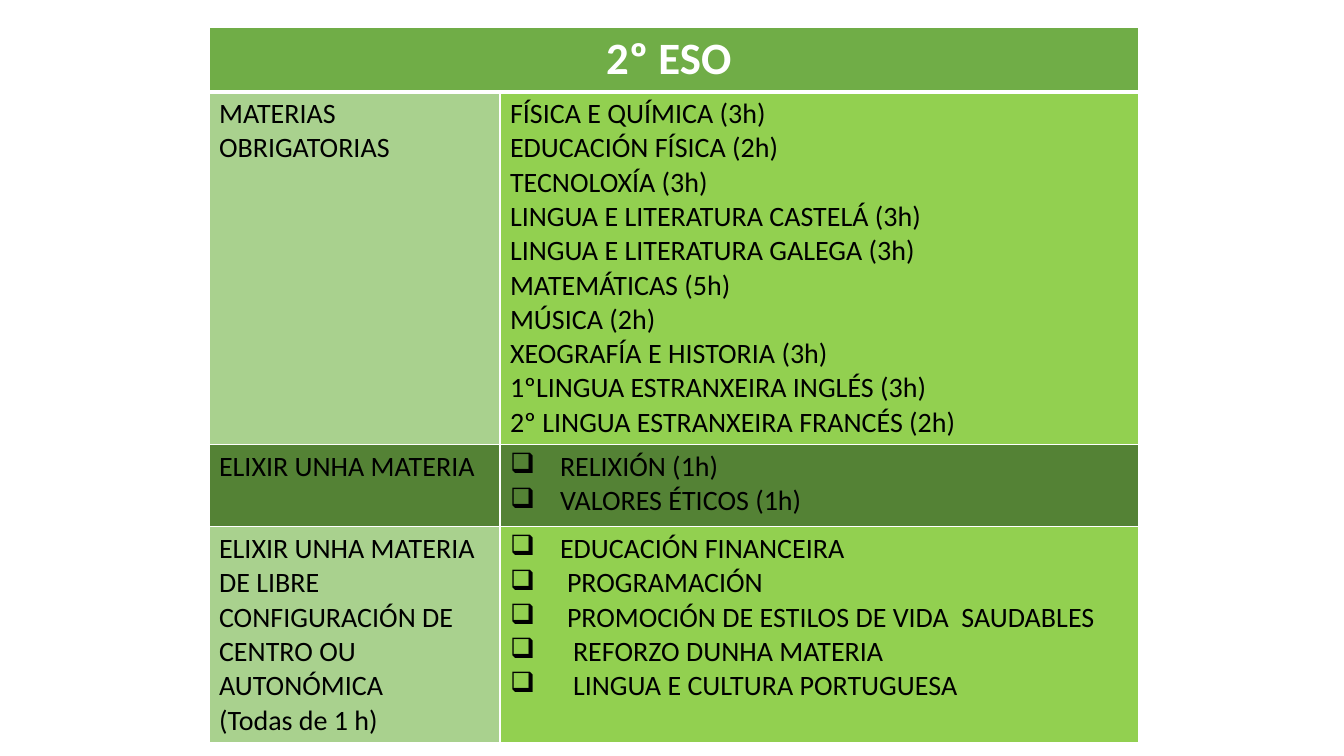
from lxml import etree
from pptx import Presentation
from pptx.dml.color import RGBColor
from pptx.enum.text import PP_ALIGN
from pptx.oxml.ns import qn
from pptx.util import Emu, Pt

PX = 914400 / 100.8
CENTER = PP_ALIGN.CENTER
LEFT = PP_ALIGN.LEFT

WHITE = RGBColor(0xFF, 0xFF, 0xFF)
BLACK = RGBColor(0x00, 0x00, 0x00)
HEADER_GREEN = RGBColor(0x70, 0xAD, 0x47)
PALE_GREEN = RGBColor(0xA9, 0xD1, 0x8E)
BRIGHT_GREEN = RGBColor(0x92, 0xD0, 0x50)
DARK_GREEN = RGBColor(0x54, 0x82, 0x35)

TABLE_BOX = (209, 27, 930, 714)
COLUMN_WIDTHS = (291, 639)
ROW_HEIGHTS = (64, 353, 82, 215)

# Each line is its text and, for a bulleted line, its indent in px.
SUBJECT_ROWS = [
    (
        PALE_GREEN, [("MATERIAS OBRIGATORIAS", 0)],
        BRIGHT_GREEN, [
            ("FÍSICA E QUÍMICA (3h)", 0),
            ("EDUCACIÓN FÍSICA (2h)", 0),
            ("TECNOLOXÍA (3h)", 0),
            ("LINGUA E LITERATURA CASTELÁ (3h)", 0),
            ("LINGUA E LITERATURA GALEGA (3h)", 0),
            ("MATEMÁTICAS (5h)", 0),
            ("MÚSICA (2h)", 0),
            ("XEOGRAFÍA E HISTORIA (3h)", 0),
            ("1ºLINGUA ESTRANXEIRA INGLÉS (3h)", 0),
            ("2º LINGUA ESTRANXEIRA FRANCÉS (2h)", 0),
        ],
    ),
    (
        DARK_GREEN, [("ELIXIR UNHA MATERIA", 0)],
        DARK_GREEN, [("RELIXIÓN (1h)", 50), ("VALORES ÉTICOS (1h)", 50)],
    ),
    (
        PALE_GREEN, [
            ("ELIXIR UNHA MATERIA", 0),
            ("DE LIBRE CONFIGURACIÓN DE CENTRO OU AUTONÓMICA", 0),
            ("(Todas de 1 h)", 0),
        ],
        BRIGHT_GREEN, [
            ("EDUCACIÓN FINANCEIRA", 50),
            ("PROGRAMACIÓN", 57),
            ("PROMOCIÓN DE ESTILOS DE VIDA  SAUDABLES", 57),
            ("REFORZO DUNHA MATERIA", 63),
            ("LINGUA E CULTURA PORTUGUESA", 63),
        ],
    ),
]


def px(length):
    return Emu(round(length * PX))


def add_bullet(paragraph, indent):
    properties = paragraph._p.get_or_add_pPr()
    properties.set("marL", str(px(indent)))
    properties.set("indent", str(-px(indent)))
    etree.SubElement(properties, qn("a:buChar")).set("char", "❑")


def set_borders(cell, top=1, bottom=1):
    """Draw white borders, with widths in points; sides are 1 pt."""
    properties = cell._tc.get_or_add_tcPr()
    widths = {"a:lnL": 1, "a:lnR": 1, "a:lnT": top, "a:lnB": bottom}
    for position, (tag, width) in enumerate(widths.items()):
        line = etree.Element(qn(tag), w=str(Pt(width)))
        fill = etree.SubElement(line, qn("a:solidFill"))
        etree.SubElement(fill, qn("a:srgbClr")).set("val", str(WHITE))
        properties.insert(position, line)


def fill_cell(cell, color, lines, size=20, font_color=BLACK, bold=False, alignment=LEFT):
    cell.fill.solid()
    cell.fill.fore_color.rgb = color
    frame = cell.text_frame
    for index, (text, indent) in enumerate(lines):
        paragraph = frame.add_paragraph() if index else frame.paragraphs[0]
        paragraph.text = text
        paragraph.alignment = alignment
        if indent:
            add_bullet(paragraph, indent)
        font = paragraph.font
        font.name = "Calibri"
        font.size = Pt(size)
        font.bold = bold
        font.color.rgb = font_color


def add_subject_table(slide, box):
    frame = slide.shapes.add_table(
        len(ROW_HEIGHTS), len(COLUMN_WIDTHS), *map(px, box)
    )
    table = frame.table
    for column, width in zip(table.columns, COLUMN_WIDTHS):
        column.width = px(width)
    for row, height in zip(table.rows, ROW_HEIGHTS):
        row.height = px(height)

    header = table.cell(0, 0)
    header.merge(table.cell(0, 1))
    fill_cell(header, HEADER_GREEN, [("2º ESO ", 0)], 32, WHITE, True, CENTER)

    for row, (label_color, label, list_color, subjects) in enumerate(SUBJECT_ROWS, 1):
        fill_cell(table.cell(row, 0), label_color, label)
        fill_cell(table.cell(row, 1), list_color, subjects)

    for row in range(len(ROW_HEIGHTS)):
        for column in range(len(COLUMN_WIDTHS)):
            set_borders(
                table.cell(row, column),
                top=3 if row == 1 else 1,
                bottom=3 if row == 0 else 1,
            )


def main():
    presentation = Presentation()
    presentation.slide_width = px(1344)
    presentation.slide_height = px(756)
    blank_layout = presentation.slide_layouts[6]
    slide = presentation.slides.add_slide(blank_layout)
    add_subject_table(slide, TABLE_BOX)
    presentation.save("out.pptx")


if __name__ == "__main__":
    main()
